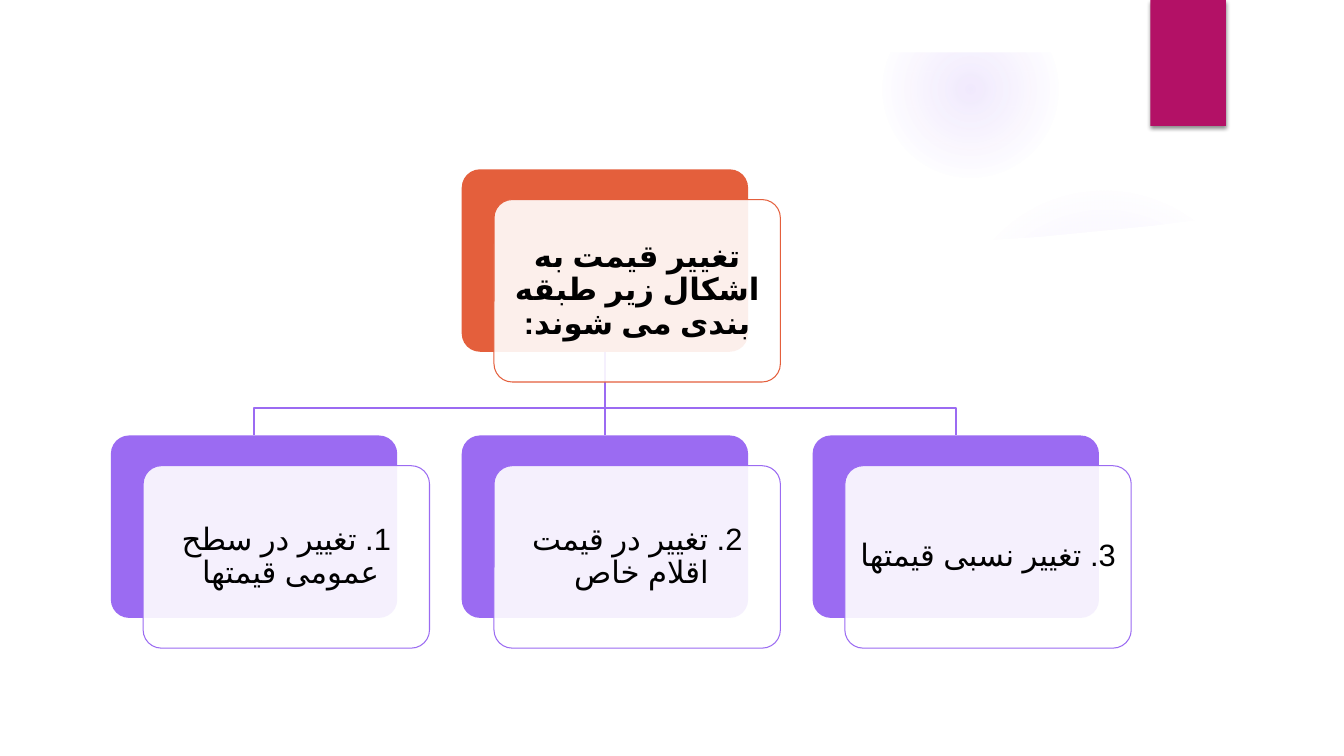
from dataclasses import dataclass

from lxml import etree
from pptx import Presentation
from pptx.dml.color import RGBColor
from pptx.enum.shapes import MSO_SHAPE
from pptx.enum.text import MSO_ANCHOR, PP_ALIGN
from pptx.oxml import parse_xml
from pptx.oxml.ns import nsdecls, qn
from pptx.shapes.autoshape import Shape
from pptx.slide import Slide
from pptx.util import Inches, Pt

ELLIPSE = MSO_SHAPE.OVAL
RECTANGLE = MSO_SHAPE.RECTANGLE
ROUNDED = MSO_SHAPE.ROUNDED_RECTANGLE
FRAME = MSO_SHAPE.FRAME
CENTER = PP_ALIGN.CENTER
MIDDLE = MSO_ANCHOR.MIDDLE

PURPLE = "9B6BF2"
ORANGE = "E45F3C"
MAGENTA = "B31166"
WHITE = "FFFFFF"
BLACK = "000000"

SLIDE_WIDTH, SLIDE_HEIGHT, BORDER = 13.33, 7.5, 0.52
CARD_WIDTH, CARD_HEIGHT = 2.84, 1.81
OFFSET_X, OFFSET_Y = 0.32, 0.3
INSET = 0.05
COLUMN_LEFT, COLUMN_STEP = 1.1, 3.48
ROOT_TOP, CHILD_TOP, BRANCH_Y = 1.68, 4.32, 4.05

Point = tuple[float, float]


@dataclass(frozen=True)
class Card:
    column: int
    top: float
    color: str
    text: str
    bold: bool = False

    @property
    def left(self) -> float:
        return COLUMN_LEFT + COLUMN_STEP * self.column

    @property
    def center(self) -> float:
        return self.left + CARD_WIDTH / 2


@dataclass(frozen=True)
class Glow:
    left: float
    top: float
    size: float
    stops: tuple[tuple[int, int], ...]


ROOT = Card(1, ROOT_TOP, ORANGE, "تغییر قیمت به اشکال زیر طبقه بندی می شوند:", True)
CHILDREN = [
    Card(0, CHILD_TOP, PURPLE, "1. تغییر در سطح عمومی قیمتها "),
    Card(1, CHILD_TOP, PURPLE, "2. تغییر در قیمت اقلام خاص "),
    Card(2, CHILD_TOP, PURPLE, "3. تغییر نسبی قیمتها"),
]
GLOWS = [
    Glow(9.41, 1.83, 3.08, ((0, 7), (36, 6), (69, 0))),
    Glow(8.75, 0.01, 1.75, ((0, 14), (36, 7), (73, 0))),
]
PANEL: list[Point] = [
    (0.5, 2.04), (2.49, 2.27), (4.88, 2.43), (7.08, 2.48), (9.21, 2.42),
    (10.32, 2.35), (11.44, 2.24), (12.28, 2.13), (12.84, 2.04),
    (12.84, 7), (0.5, 7),
]


def color_of(value: str) -> RGBColor:
    return RGBColor.from_string(value)


def paint(shape: Shape, fill: str | None, line: str | None = None,
          width: float = 0.75, opacity: int = 100) -> None:
    shape.shadow.inherit = False
    if fill is None:
        shape.fill.background()
    else:
        shape.fill.solid()
        shape.fill.fore_color.rgb = color_of(fill)
        if opacity < 100:
            color = shape._element.spPr.find(qn("a:solidFill"))[0]
            etree.SubElement(color, qn("a:alpha")).set("val", str(opacity * 1000))
    if line is None:
        shape.line.fill.background()
    else:
        shape.line.color.rgb = color_of(line)
        shape.line.width = Pt(width)


def add_box(slide: Slide, kind: MSO_SHAPE, left: float, top: float,
            width: float, height: float) -> Shape:
    return slide.shapes.add_shape(
        kind, Inches(left), Inches(top), Inches(width), Inches(height))


def add_outline(slide: Slide, points: list[Point], close: bool) -> Shape:
    corners = [(Inches(x), Inches(y)) for x, y in points]
    builder = slide.shapes.build_freeform(*corners[0])
    builder.add_line_segments(corners[1:], close=close)
    return builder.convert_to_shape()


def add_glow(slide: Slide, glow: Glow) -> None:
    shape = add_box(slide, ELLIPSE, glow.left, glow.top, glow.size, glow.size)
    paint(shape, PURPLE)
    stops = "".join(
        f'<a:gs pos="{position * 1000}"><a:srgbClr val="{PURPLE}">'
        f'<a:alpha val="{opacity * 1000}"/></a:srgbClr></a:gs>'
        for position, opacity in glow.stops)
    gradient = parse_xml(
        f'<a:gradFill {nsdecls("a")} rotWithShape="1"><a:gsLst>{stops}</a:gsLst>'
        '<a:path path="circle"><a:fillToRect l="50000" t="50000" r="50000" '
        'b="50000"/></a:path></a:gradFill>')
    properties = shape._element.spPr
    properties.replace(properties.find(qn("a:solidFill")), gradient)


def add_border(slide: Slide) -> None:
    border = add_box(slide, FRAME, 0, 0, SLIDE_WIDTH, SLIDE_HEIGHT)
    border.adjustments[0] = BORDER / SLIDE_HEIGHT
    paint(border, WHITE)


def add_ribbon(slide: Slide) -> None:
    ribbon = add_box(slide, RECTANGLE, 11.41, 0, 0.75, 1.25)
    paint(ribbon, MAGENTA)
    effects = ribbon._element.spPr.find(qn("a:effectLst"))
    effects.append(parse_xml(
        f'<a:outerShdw {nsdecls("a")} blurRad="{Pt(3)}" dist="{Pt(2)}" '
        f'dir="5400000" rotWithShape="0"><a:srgbClr val="{BLACK}">'
        '<a:alpha val="45000"/></a:srgbClr></a:outerShdw>'))


def add_branch(slide: Slide, child: Card) -> None:
    points = [(ROOT.center, ROOT_TOP + CARD_HEIGHT)]
    if child.column != ROOT.column:
        points += [(ROOT.center, BRANCH_Y), (child.center, BRANCH_Y)]
    points.append((child.center, CHILD_TOP))
    paint(add_outline(slide, points, close=False), None, PURPLE, 1.5)


def add_card(slide: Slide, card: Card) -> None:
    back = add_box(slide, ROUNDED, card.left, card.top, CARD_WIDTH, CARD_HEIGHT)
    back.adjustments[0] = 0.1
    paint(back, card.color)
    left, top = card.left + OFFSET_X, card.top + OFFSET_Y
    front = add_box(slide, ROUNDED, left, top, CARD_WIDTH, CARD_HEIGHT)
    front.adjustments[0] = 0.1
    paint(front, WHITE, card.color, opacity=90)

    label = slide.shapes.add_textbox(
        Inches(left + INSET), Inches(top + INSET),
        Inches(CARD_WIDTH - 2 * INSET), Inches(CARD_HEIGHT - 2 * INSET))
    frame = label.text_frame
    frame.word_wrap = True
    frame.vertical_anchor = MIDDLE
    frame.margin_left = frame.margin_right = Inches(0.09)
    frame.margin_top = frame.margin_bottom = Inches(0.09)
    paragraph = frame.paragraphs[0]
    paragraph.alignment = CENTER
    paragraph.line_spacing = 0.9
    paragraph._p.get_or_add_pPr().set("rtl", "1")
    run = paragraph.add_run()
    run.text = card.text
    run.font.name = "Calibri"
    run.font.size = Pt(22)
    run.font.bold = card.bold
    run.font.color.rgb = color_of(BLACK)
    properties = run._r.get_or_add_rPr()
    properties.set("lang", "fa-IR")
    etree.SubElement(properties, qn("a:cs")).set("typeface", "Arial")


def main() -> None:
    presentation = Presentation()
    presentation.slide_width = Inches(SLIDE_WIDTH)
    presentation.slide_height = Inches(SLIDE_HEIGHT)
    slide = presentation.slides.add_slide(presentation.slide_layouts[6])
    for glow in GLOWS:
        add_glow(slide, glow)
    paint(add_outline(slide, PANEL, close=True), WHITE)
    add_border(slide)
    add_ribbon(slide)
    for child in CHILDREN:
        add_branch(slide, child)
    for card in [ROOT, *CHILDREN]:
        add_card(slide, card)
    presentation.save("out.pptx")


if __name__ == "__main__":
    main()
